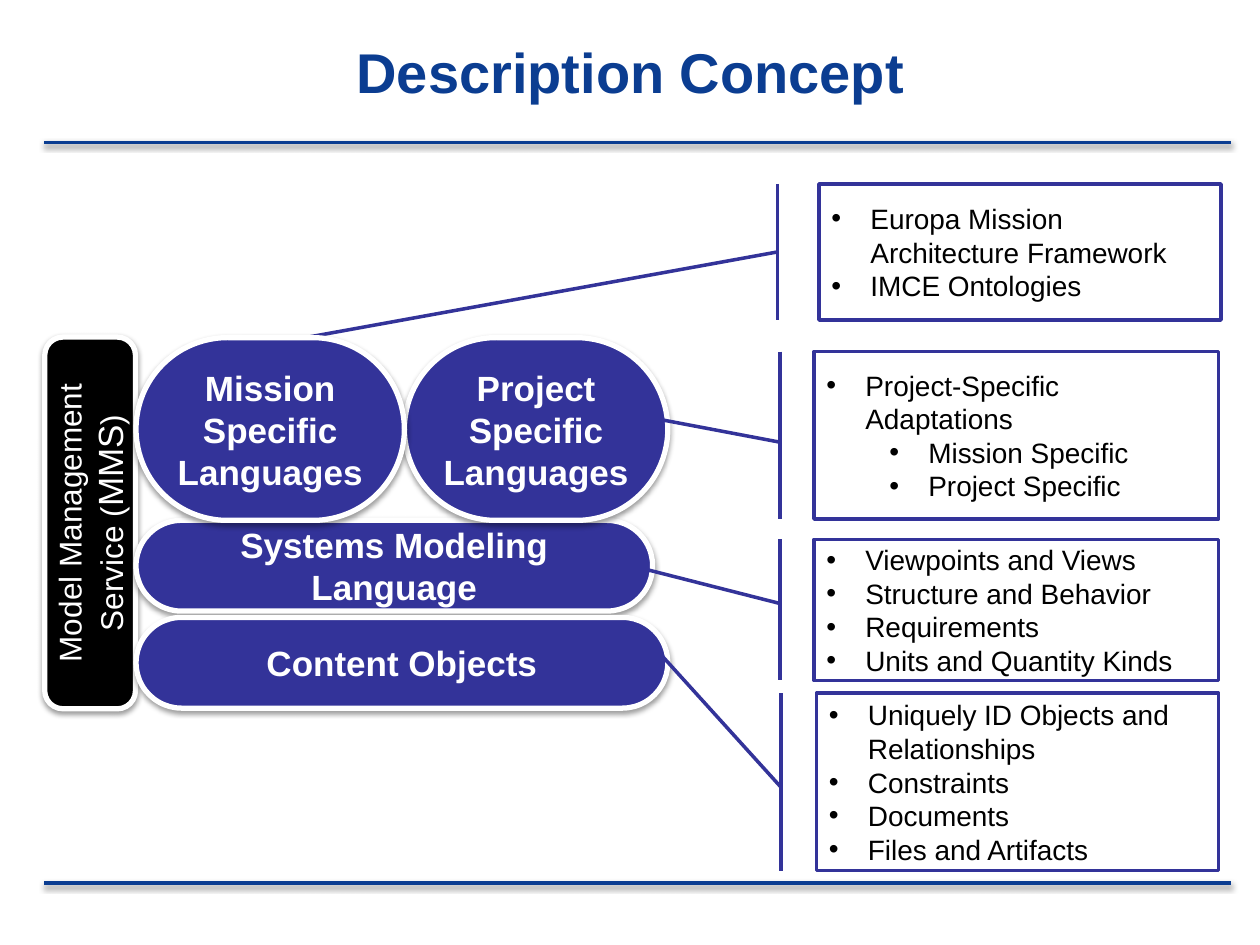
from lxml.etree import SubElement
from pptx import Presentation
from pptx.dml.color import RGBColor
from pptx.enum.shapes import MSO_CONNECTOR, MSO_SHAPE
from pptx.enum.text import MSO_ANCHOR, PP_ALIGN
from pptx.oxml.ns import qn
from pptx.util import Inches, Pt

# Content
TITLE = "Description Concept"
SERVICE = [("Model Management Service (", 18), ("MMS", 20), (")", 18)]
# Layers: text, (left, top, width, height)
LAYERS = [
    ("Systems Modeling Language", (1.08, 4.13, 4.1, 0.72)),
    ("Content Objects", (1.08, 4.9, 4.22, 0.72)),
    ("Project Specific Languages", (3.21, 2.68, 2.09, 1.45)),
]
FRONT_LAYER = ("Mission Specific Languages", (1.08, 2.68, 2.13, 1.45))
# Callouts: box, accent bar x, leader start y, leader tip (x, y), [(level, text)]
CALLOUTS = [
    ((6.46, 2.79, 3.21, 1.33), 6.19, 3.51, (5.24, 3.33),
     [(0, "Project-Specific Adaptations"), (1, "Mission Specific"),
      (1, "Project Specific")]),
    ((6.5, 1.46, 3.19, 1.08), 6.17, 2.0, (2.26, 2.71),
     [(0, "Europa Mission Architecture Framework"), (0, "IMCE Ontologies")]),
    ((6.46, 4.28, 3.21, 1.12), 6.19, 4.79, (5.13, 4.52),
     [(0, "Viewpoints and Views"), (0, "Structure and Behavior"),
      (0, "Requirements"), (0, "Units and Quantity Kinds")]),
    ((6.48, 5.5, 3.19, 1.41), 6.2, 6.25, (5.25, 5.2),
     [(0, "Uniquely ID Objects and Relationships"), (0, "Constraints"),
      (0, "Documents"), (0, "Files and Artifacts")]),
]
NAVY, INDIGO, WHITE, BLACK = "0B3D91", "333399", "FFFFFF", "000000"


def color(hex_text):
    return RGBColor.from_string(hex_text)


def add_shadow(sp):
    effects = SubElement(sp._element.spPr, qn("a:effectLst"))
    shadow = SubElement(effects, qn("a:outerShdw"), blurRad=str(Pt(3.1)),
                        dist=str(Pt(1.6)), dir="5400000", rotWithShape="0")
    clr = SubElement(shadow, qn("a:srgbClr"), val=BLACK)
    SubElement(clr, qn("a:alpha"), val="38000")


def add_run(p, text, size, hex_text, bold=False):
    r = p.add_run()
    r.text = text
    r.font.name = "Arial"
    r.font.size = Pt(size)
    r.font.bold = bold
    r.font.color.rgb = color(hex_text)


def add_box(kind, box, fill, line, width):
    sp = s.shapes.add_shape(kind, *map(Inches, box))
    sp.fill.solid()
    sp.fill.fore_color.rgb = color(fill)
    sp.line.color.rgb = color(line)
    sp.line.width = Pt(width)
    sp.text_frame.word_wrap = True
    sp.text_frame.vertical_anchor = MSO_ANCHOR.MIDDLE
    return sp


def add_block(box, fill, rounding, runs, bold):
    sp = add_box(MSO_SHAPE.ROUNDED_RECTANGLE, box, fill, WHITE, 3)
    sp.adjustments[0] = rounding
    add_shadow(sp)
    p = sp.text_frame.paragraphs[0]
    p.alignment = PP_ALIGN.CENTER
    for text, size in runs:
        add_run(p, text, size, WHITE, bold)
    return sp


def add_layer(text, box):
    tf = add_block(box, INDIGO, 0.5, [(text, 20)], True).text_frame
    # Narrow side margins keep the longest word on one line
    tf.margin_left = tf.margin_right = Inches(0.08)


def add_callout(box, bar_x, start_y, tip, items):
    sp = add_box(MSO_SHAPE.LINE_CALLOUT_1_BORDER_AND_ACCENT_BAR,
                 box, WHITE, INDIGO, 2)
    sp.shadow.inherit = False
    left, top, width, height = box
    # Adjustments are y, x pairs relative to the box
    points = [(bar_x, start_y), tip]
    for i, (x, y) in enumerate(points):
        sp.adjustments[2 * i] = (y - top) / height
        sp.adjustments[2 * i + 1] = (x - left) / width
    tf = sp.text_frame
    for i, (level, text) in enumerate(items):
        p = tf.add_paragraph() if i else tf.paragraphs[0]
        p.alignment = PP_ALIGN.LEFT
        p.level = level
        pPr = p._p.get_or_add_pPr()
        pPr.set("marL", str(Inches(0.31 + 0.5 * level)))
        pPr.set("indent", str(Inches(-0.31)))
        SubElement(pPr, qn("a:buFont"), typeface="Arial")
        SubElement(pPr, qn("a:buChar"), char="•")
        add_run(p, text, 16, BLACK)


prs = Presentation()
prs.slide_width, prs.slide_height = Inches(10), Inches(7.5)
s = prs.slides.add_slide(prs.slide_layouts[5])

# Header and footer rules
for y in (1.13, 7.01):
    rule = s.shapes.add_connector(MSO_CONNECTOR.STRAIGHT, Inches(0.35),
                                  Inches(y), Inches(9.77), Inches(y))
    rule.line.color.rgb = color(NAVY)
    rule.line.width = Pt(2)
    add_shadow(rule)

# Title
title = s.shapes.title
title.left, title.top, title.width, title.height = map(
    Inches, (1.18, 0.08, 7.65, 0.97))
title.text_frame.vertical_anchor = MSO_ANCHOR.MIDDLE
p = title.text_frame.paragraphs[0]
p.alignment = PP_ALIGN.CENTER
add_run(p, TITLE, 32, NAVY, True)

# Service bar, turned to read upwards
service = add_block((-0.76, 3.79, 2.95, 0.72), BLACK, 0.2, SERVICE, False)
service.rotation = 270

# Layers and callouts; the front layer covers the end of a leader
for layer in LAYERS:
    add_layer(*layer)
for callout in CALLOUTS:
    add_callout(*callout)
add_layer(*FRONT_LAYER)

prs.save("out.pptx")
